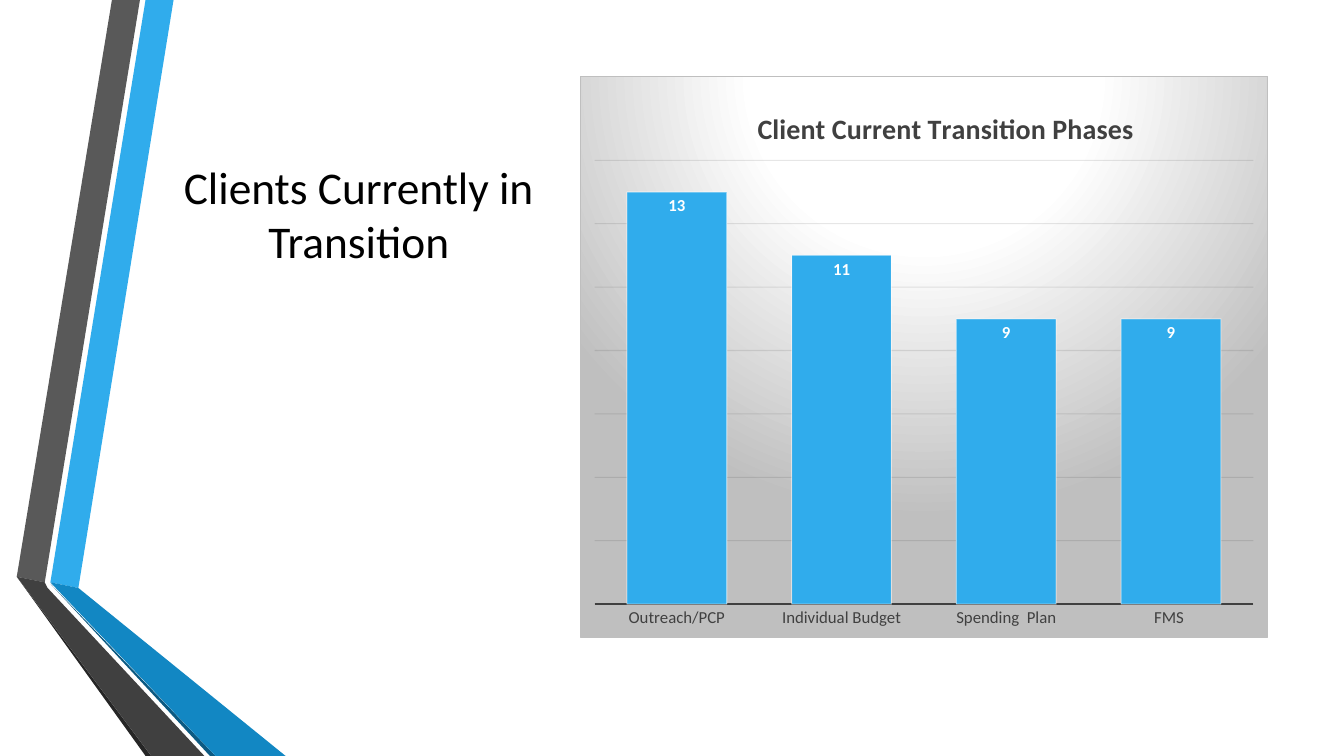
"""Builds the slide on clients currently in transition, with its column chart."""
from lxml import etree
from pptx import Presentation
from pptx.chart import data
from pptx.dml import color
from pptx.enum import chart as kinds, text
from pptx.oxml import ns, parse_xml
from pptx.util import Pt

COLORS = {
    "black": "000000", "white": "FFFFFF", "blue": "30ACEC", "mid_blue": "1287C3",
    "deep_blue": "0C5A82", "gray": "595959", "dark_gray": "404040",
    "near_black": "262626", "grid": "0D0D0D", "silver": "BFBFBF",
}
FONT = "Calibri"
RIBBONS = [
    ("blue", [(36, 416), (55.5, 420), (124.5, 0), (104.5, 0)]),
    ("gray", [(100, 0), (80, 0), (11.5, 412.5), (31.5, 415.5)]),
    ("near_black", [(11.5, 412.5), (104.5, 540), (108.5, 540)]),
    ("deep_blue", [(36, 417), (150, 540), (154, 540)]),
    ("mid_blue", [(36, 416.5), (154, 540), (204, 540), (55.5, 420)]),
    ("dark_gray", [(145.5, 540), (34.5, 420), (31.5, 415.5), (11.5, 412.5), (108.5, 540)]),
]


def style_font(font, size, name, bold=False):
    font.name, font.size, font.bold = FONT, Pt(size), bold
    font.color.rgb = color.RGBColor.from_string(COLORS[name])


def make_layout(**values):
    layout = etree.Element(ns.qn("c:layout"))
    manual = etree.SubElement(layout, ns.qn("c:manualLayout"))
    for tag, value in values.items():
        etree.SubElement(manual, ns.qn("c:" + tag)).set("val", str(value))
    return layout


deck = Presentation()
deck.slide_width, deck.slide_height = Pt(960), Pt(540)
page = deck.slides.add_slide(deck.slide_layouts[5])

for name, corners in RIBBONS:
    builder = page.shapes.build_freeform(*corners[0], scale=Pt(1))
    builder.add_line_segments(corners[1:], close=True)
    ribbon = builder.convert_to_shape()
    ribbon.shadow.inherit = False
    ribbon.fill.solid()
    ribbon.fill.fore_color.rgb = color.RGBColor.from_string(COLORS[name])
    ribbon.line.fill.background()

title = page.shapes.title
title.left, title.top, title.width, title.height = Pt(116.5), Pt(126), Pt(279.5), Pt(108)
frame = title.text_frame
frame.word_wrap = True
frame.auto_size = text.MSO_AUTO_SIZE.NONE
frame.vertical_anchor = text.MSO_ANCHOR.BOTTOM
frame.margin_bottom = Pt(42.5)
para = frame.paragraphs[0]
para.alignment = text.PP_ALIGN.CENTER
span = para.add_run()
span.text = "Clients Currently in Transition"
style_font(span.font, 32.4, "black")

phases = data.CategoryChartData()
phases.categories = ["Outreach/PCP", "Individual Budget", "Spending  Plan", "FMS "]
phases.add_series("Series 1", [13, 11, 9, 9])
chart = page.shapes.add_chart(
    kinds.XL_CHART_TYPE.COLUMN_CLUSTERED, Pt(414.5), Pt(54), Pt(491), Pt(402), phases).chart
chart.has_legend = False
style_font(chart.font, 10, "black")

chart.has_title = True
heading = chart.chart_title.text_frame.paragraphs[0].add_run()
heading.text = "Client Current Transition Phases"
style_font(heading.font, 20, "dark_gray", True)
chart.chart_title.include_in_layout = False

category_axis = chart.category_axis
category_axis.major_tick_mark = kinds.XL_TICK_MARK.NONE
style_font(category_axis.tick_labels.font, 12, "dark_gray")
category_axis.format.line.width = Pt(1.5)
category_axis.format.line.color.rgb = color.RGBColor.from_string(COLORS["dark_gray"])

value_axis = chart.value_axis
value_axis.minimum_scale, value_axis.maximum_scale, value_axis.major_unit = 0, 14, 2
value_axis.has_major_gridlines = True
value_axis.visible = False
grid_line = value_axis.major_gridlines.format.line
grid_line.width = Pt(0.75)
grid_line.color.rgb = color.RGBColor.from_string(COLORS["grid"])

plot = chart.plots[0]
plot.gap_width = 65
plot.vary_by_categories = False
columns = plot.series[0]
columns.format.fill.solid()
columns.format.fill.fore_color.rgb = color.RGBColor.from_string(COLORS["blue"])
columns.format.line.width = Pt(0.75)
columns.format.line.color.rgb = color.RGBColor.from_string(COLORS["white"])
labels = columns.data_labels
labels.show_value = True
labels.position = kinds.XL_LABEL_POSITION.INSIDE_END
style_font(labels.font, 12, "white", True)

space = chart._chartSpace
for query, opacity in [("//c:majorGridlines//a:srgbClr", 10), ("//c:ser/c:spPr/a:ln//a:srgbClr", 50)]:
    for tint in space.xpath(query):
        etree.SubElement(tint, ns.qn("a:alpha")).set("val", str(opacity * 1000))

for old in space.xpath("//c:title/c:layout | //c:plotArea/c:layout"):
    old.getparent().remove(old)
space.xpath("//c:title/c:tx")[0].addnext(make_layout(xMode="edge", yMode="edge", x=0.25, y=0.05))
space.xpath("//c:plotArea")[0].insert(0, make_layout(
    layoutTarget="inner", xMode="edge", yMode="edge", x=0.02, y=0.15, w=0.96, h=0.79))

stops = "".join(
    f'<a:gs pos="{place * 1000}"><a:srgbClr val="{COLORS[name]}"/></a:gs>'
    for place, name in [(0, "white"), (39, "white"), (100, "silver")])
space.xpath("c:chart")[0].addnext(parse_xml(
    f'<c:spPr {ns.nsdecls("c", "a")}><a:gradFill><a:gsLst>{stops}</a:gsLst>'
    '<a:path path="circle"><a:fillToRect l="50000" t="-80000" r="50000" b="180000"/></a:path>'
    f'</a:gradFill><a:ln w="{Pt(0.75)}"><a:solidFill><a:srgbClr val="{COLORS["silver"]}"/>'
    '</a:solidFill></a:ln></c:spPr>'))

deck.save("out.pptx")
